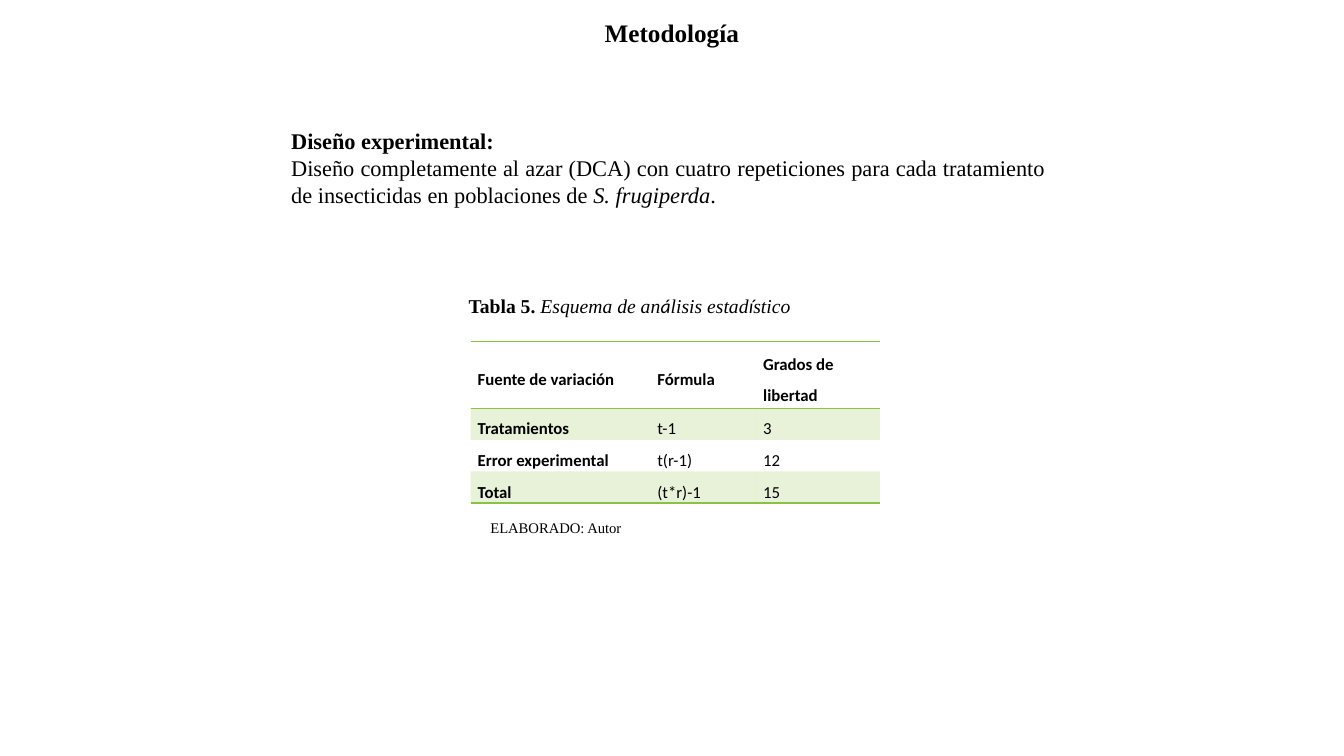
from dataclasses import dataclass

from lxml.etree import SubElement
from pptx import Presentation
from pptx.dml.color import RGBColor
from pptx.enum.text import MSO_ANCHOR as Anchor, MSO_AUTO_SIZE as AutoSize, PP_ALIGN as Align
from pptx.oxml.ns import qn
from pptx.slide import Slide
from pptx.table import _Cell as Cell
from pptx.text.text import _Paragraph as Paragraph
from pptx.util import Pt


@dataclass(frozen=True)
class Theme:
    ink: str = "000000"
    green: str = "8BC145"
    band_opacity: int = 20
    serif: str = "Times New Roman"
    sans: str = "Calibri"
    title: float = 18
    body: float = 16
    caption: float = 14
    cell: float = 12
    credit: float = 10.5


@dataclass(frozen=True)
class Span:
    text: str
    bold: bool = False
    italic: bool = False
    font: str = Theme.serif


@dataclass(frozen=True)
class TextBlock:
    left: float
    top: float
    width: float
    height: float
    size: float
    paragraphs: list[list[Span]]
    align: Align = Align.JUSTIFY
    anchor: Anchor = Anchor.TOP


THEME = Theme()

TEXT_BLOCKS = [
    # Slide title
    TextBlock(352.8, 8.6, 254.2, 28.8, THEME.title,
              [[Span("Metodología", bold=True)]], align=Align.CENTER),
    # Experimental design
    TextBlock(200.9, 87.1, 553, 65.5, THEME.body, [
        [Span("Diseño experimental: ", bold=True)],
        [Span("Diseño completamente al azar (DCA) con cuatro repeticiones para cada "
              "tratamiento de insecticidas en poblaciones de "),
         Span("S. frugiperda", italic=True),
         Span(".")],
    ]),
    # Table caption
    TextBlock(327.6, 205.9, 313.2, 24.5, THEME.caption, [[
        Span("Tabla 5.", bold=True),
        Span(" Esquema de an", italic=True),
        Span("á", italic=True, font=THEME.sans),
        Span("lisis estad", italic=True),
        Span("í", italic=True, font=THEME.sans),
        Span("stico", italic=True),
    ]], anchor=Anchor.MIDDLE),
    # Table credit
    TextBlock(340.6, 367.2, 143.3, 20.9, THEME.credit, [[Span(" ELABORADO: Autor")]]),
]

ANALYSIS = [
    ("Fuente de variación", "Fórmula", "Grados de libertad"),
    ("Tratamientos", "t-1", "3"),
    ("Error experimental", "t(r-1)", "12"),
    ("Total", "(t*r)-1", "15"),
]
TABLE_LEFT, TABLE_TOP = 336.2, 244.1
COLUMN_WIDTHS = (128.4, 75.6, 88.4)
HEADER_HEIGHT, ROW_HEIGHT = 47.5, 22.6


def add_span(paragraph: Paragraph, span: Span, size: float) -> None:
    run = paragraph.add_run()
    run.text = span.text
    run.font.name = span.font
    run.font.size = Pt(size)
    run.font.bold = span.bold
    run.font.italic = span.italic
    run.font.color.rgb = RGBColor.from_string(THEME.ink)


def add_text(slide: Slide, block: TextBlock) -> None:
    frame = slide.shapes.add_textbox(
        Pt(block.left), Pt(block.top), Pt(block.width), Pt(block.height)).text_frame
    frame.word_wrap = True
    frame.auto_size = AutoSize.SHAPE_TO_FIT_TEXT
    frame.vertical_anchor = block.anchor
    for index, spans in enumerate(block.paragraphs):
        paragraph = frame.add_paragraph() if index else frame.paragraphs[0]
        paragraph.alignment = block.align
        for span in spans:
            add_span(paragraph, span, block.size)


def add_border(cell: Cell, side: str) -> None:
    line = SubElement(cell._tc.get_or_add_tcPr(), qn(f"a:{side}"), w=str(Pt(1)))
    SubElement(SubElement(line, qn("a:solidFill")), qn("a:srgbClr"), val=THEME.green)


def fill_band(cell: Cell) -> None:
    cell.fill.solid()
    cell.fill.fore_color.rgb = RGBColor.from_string(THEME.green)
    color = cell._tc.tcPr.find(f"{qn('a:solidFill')}/{qn('a:srgbClr')}")
    SubElement(color, qn("a:alpha"), val=str(THEME.band_opacity * 1000))


def style_cell(cell: Cell, span: Span, borders: list[str], banded: bool) -> None:
    cell.margin_left = cell.margin_right = Pt(5)
    cell.margin_top = cell.margin_bottom = Pt(0)
    cell.vertical_anchor = Anchor.MIDDLE
    paragraph = cell.text_frame.paragraphs[0]
    paragraph.line_spacing = 1.5
    paragraph.space_after = Pt(8)
    add_span(paragraph, span, THEME.cell)
    for side in borders:
        add_border(cell, side)
    if banded:
        fill_band(cell)
    else:
        cell.fill.background()


def add_analysis_table(slide: Slide) -> None:
    last = len(ANALYSIS) - 1
    heights = [HEADER_HEIGHT] + [ROW_HEIGHT] * last
    table = slide.shapes.add_table(
        len(ANALYSIS), len(COLUMN_WIDTHS), Pt(TABLE_LEFT), Pt(TABLE_TOP),
        Pt(sum(COLUMN_WIDTHS)), Pt(sum(heights))).table
    table.first_row = table.horz_banding = False
    # "No Style, No Grid" table style
    style = table._tbl.tblPr.find(qn("a:tableStyleId"))
    style.text = "{2D5ABB26-0587-4C30-8999-92F81FD0307C}"
    for column, width in zip(table.columns, COLUMN_WIDTHS):
        column.width = Pt(width)
    for r, (values, height) in enumerate(zip(ANALYSIS, heights)):
        table.rows[r].height = Pt(height)
        borders = (["lnT"] if r == 0 else []) + (["lnB"] if r in (0, last) else [])
        for c, value in enumerate(values):
            span = Span(value, bold=r == 0 or c == 0, font=THEME.sans)
            style_cell(table.cell(r, c), span, borders, banded=r % 2 == 1)


def main() -> None:
    deck = Presentation()
    deck.slide_width, deck.slide_height = Pt(960), Pt(540)
    slide = deck.slides.add_slide(deck.slide_layouts[6])
    add_analysis_table(slide)
    for block in TEXT_BLOCKS:
        add_text(slide, block)
    deck.save("out.pptx")


if __name__ == "__main__":
    main()
